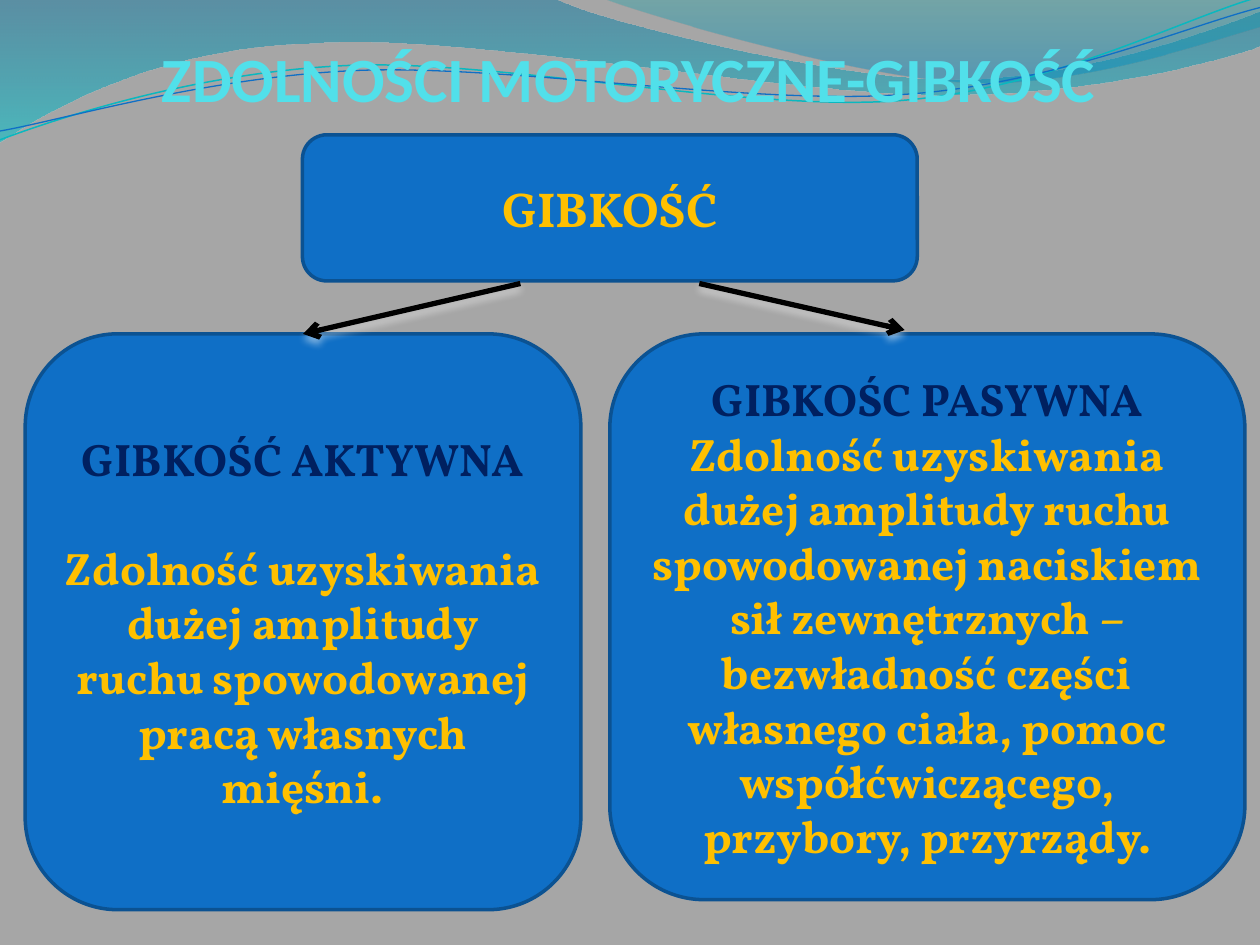
from lxml.etree import SubElement
from pptx import Presentation
from pptx.dml.color import RGBColor
from pptx.enum.shapes import MSO_CONNECTOR, MSO_SHAPE
from pptx.enum.text import MSO_ANCHOR, MSO_AUTO_SIZE, PP_ALIGN
from pptx.oxml.ns import qn
from pptx.util import Inches, Pt

# Content
TITLE = "ZDOLNOŚCI MOTORYCZNE-GIBKOŚĆ"
# Each box: name, place on the grid, paragraphs (text, style, space after in points)
BOXES = [
    ("root", (24, 10.7, 48.8, 11.6), [("GIBKOŚĆ", "root", 0)]),
    ("active", (2, 26.5, 44.1, 45.7), [
        ("GIBKOŚĆ AKTYWNA", "heading", 31.2),
        ("Zdolność uzyskiwania dużej amplitudy ruchu spowodowanej "
         "pracą własnych mięśni.", "body", 0)]),
    ("passive", (48.4, 26.5, 50.4, 44.9), [
        ("GIBKOŚC PASYWNA", "heading", 0),
        ("Zdolność uzyskiwania dużej amplitudy ruchu spowodowanej naciskiem "
         "sił zewnętrznych – bezwładność części własnego ciała, pomoc "
         "współćwiczącego, przybory, przyrządy.", "body", 0)]),
]
# Each arrow: start, end, box whose top middle it meets
ARROWS = [((41.3, 22.5), (24, 26.5), "active"), ((55.5, 22.5), (71.8, 26.2), None)]

# Theme: colours, type and line widths
THEME = {
    "background": "A6A6A6", "box": "0F6FC6", "box_line": "0B5292",
    "arrow": "000000", "glow": "FFFFFF", "box_width": 2, "arrow_width": 3,
    "text": {
        "title": {"name": "Calibri", "size": Pt(36), "bold": True, "color": "51E0EA"},
        "root": {"name": "Vollkorn", "size": Pt(28), "bold": True, "color": "FFC000"},
        "heading": {"name": "Vollkorn", "size": Pt(26), "bold": True, "color": "002060"},
        "body": {"name": "Vollkorn", "size": Pt(26), "bold": True, "color": "FFC000"},
    },
}

# Waves: a start, then one point for a straight step or three for a curve
# Gradient stops are position, colour, opacity in percent
WAVES = [
    {"start": (0, 0), "steps": [
        [(44, -0.1)],
        [(47.6, 1.7), (66.4, 6.3), (75.8, 6.3)],
        [(85.3, 6.3), (95.8, 2.6), (100, 0.9)],
        [(100.1, 3.6)],
        [(98.3, 4.4), (87, 7.6), (74.6, 7.5)],
        [(62.2, 7.5), (38.2, 2.8), (25.7, 3.4)],
        [(12.9, 3.6), (4.6, 8.3), (-0.1, 11.3)],
        [(0, 0)]],
     "gradient": [(0, "0074A1", 45), (1, "00C6CF", 55)]},
    {"start": (47.9, -0.1), "steps": [
        [(50.9, 1.1), (68.2, 6.2), (76.9, 6.5)],
        [(85.6, 6.9), (96.1, 3.2), (100, 2.1)],
        [(100, 0)],
        [(47.9, -0.1)]],
     "gradient": [(0, "00A1A9", 30), (0.8, "008BBF", 45)]},
    {"start": (0, 11.1), "steps": [
        [(4.8, 9.3), (15.8, 5.7), (27.7, 5.2)],
        [(39.5, 4.7), (59.3, 8.9), (71.3, 8)],
        [(83.3, 7.1), (93.8, 1.5), (99.8, -0.2)]],
     "line": ("0AB8BF", 0.85)},
    {"start": (0, 10.4), "steps": [
        [(4.7, 9.6), (16.4, 6.1), (28.3, 5.6)],
        [(40.3, 5.1), (59.7, 8.4), (71.7, 7.5)],
        [(83.6, 6.7), (94.1, 2.1), (100, 0.6)]],
     "line": ("0F6FC6", 0.75)},
]

# Grid of 100 columns by 75 rows
deck = Presentation()
deck.slide_width, deck.slide_height = Inches(10), Inches(7.5)
CELL = deck.slide_width / 100


def grid(*lengths):
    return [round(length * CELL) for length in lengths]


def color(value):
    return RGBColor.from_string(value)


def set_line(shape, value, width):
    shape.line.color.rgb = color(value)
    shape.line.width = Pt(width)


def write(para, text, style):
    para.alignment = PP_ALIGN.CENTER
    span = para.add_run()
    span.text = text
    for key, value in THEME["text"][style].items():
        if key == "color":
            span.font.color.rgb = color(value)
        else:
            setattr(span.font, key, value)


def bend(wave, steps):
    """Join the three straight parts of each curved step into one cubic curve."""
    parts = iter(list(wave.element.iter(qn("a:lnTo"))))
    for step in steps:
        first, *others = [next(parts) for _ in step]
        if others:
            curve = first.makeelement(qn("a:cubicBezTo"))
            first.addprevious(curve)
            for part in (first, *others):
                curve.append(part[0])
                part.getparent().remove(part)


def add_wave(page, start, steps, gradient=None, line=None):
    builder = page.shapes.build_freeform(*grid(*start), scale=1.0)
    points = [grid(*point) for step in steps for point in step]
    builder.add_line_segments(points, close=bool(gradient))
    wave = builder.convert_to_shape()
    bend(wave, steps)
    wave.shadow.inherit = False
    if line:
        wave.fill.background()
        set_line(wave, *line)
        return
    wave.line.fill.background()
    wave.fill.gradient()
    wave.fill.gradient_angle = 270
    for stop, (position, value, _) in zip(wave.fill.gradient_stops, gradient):
        stop.position = position
        stop.color.rgb = color(value)
    for tint, (_, _, opacity) in zip(wave.element.spPr.iter(qn("a:srgbClr")), gradient):
        SubElement(tint, qn("a:alpha"), val=str(opacity * 1000))


def add_box(page, place, paragraphs):
    box = page.shapes.add_shape(MSO_SHAPE.ROUNDED_RECTANGLE, *grid(*place))
    box.shadow.inherit = False
    box.fill.solid()
    box.fill.fore_color.rgb = color(THEME["box"])
    set_line(box, THEME["box_line"], THEME["box_width"])
    frame = box.text_frame
    frame.word_wrap = True
    frame.vertical_anchor = MSO_ANCHOR.MIDDLE
    for index, (text, style, space) in enumerate(paragraphs):
        para = frame.add_paragraph() if index else frame.paragraphs[0]
        para.space_after = Pt(space)
        write(para, text, style)
    return box


def add_arrow(page, start, end, target):
    arrow = page.shapes.add_connector(MSO_CONNECTOR.STRAIGHT, *grid(*start, *end))
    if target is not None:
        arrow.end_connect(target, 0)
    set_line(arrow, THEME["arrow"], THEME["arrow_width"])
    properties = arrow.element.spPr
    SubElement(properties.find(qn("a:ln")), qn("a:tailEnd"), type="arrow")
    # Soft glow just below the line
    effects = SubElement(properties, qn("a:effectLst"))
    shadow = SubElement(effects, qn("a:outerShdw"), blurRad=str(Pt(4.5)),
                        dist=str(Pt(3)), dir="5400000", algn="ctr", rotWithShape="0")
    tint = SubElement(shadow, qn("a:srgbClr"), val=THEME["glow"])
    SubElement(tint, qn("a:alpha"), val="48000")


# Page and waves
page = deck.slides.add_slide(deck.slide_layouts[5])
page.background.fill.solid()
page.background.fill.fore_color.rgb = color(THEME["background"])
for wave in WAVES:
    add_wave(page, **wave)

# Title, in front of the waves
title = page.shapes.title
title.element.getparent().append(title.element)
title.left, title.top, title.width, title.height = grid(2.75, 0, 94.5, 9.15)
for key, value in {"margin_left": 0, "margin_top": 0, "margin_right": Inches(0.02),
                   "margin_bottom": 0, "vertical_anchor": MSO_ANCHOR.BOTTOM,
                   "word_wrap": True, "auto_size": MSO_AUTO_SIZE.NONE}.items():
    setattr(title.text_frame, key, value)
write(title.text_frame.paragraphs[0], TITLE, "title")

# Boxes and arrows
boxes = {name: add_box(page, place, paragraphs) for name, place, paragraphs in BOXES}
for start, end, target in ARROWS:
    add_arrow(page, start, end, boxes.get(target))

deck.save("out.pptx")
